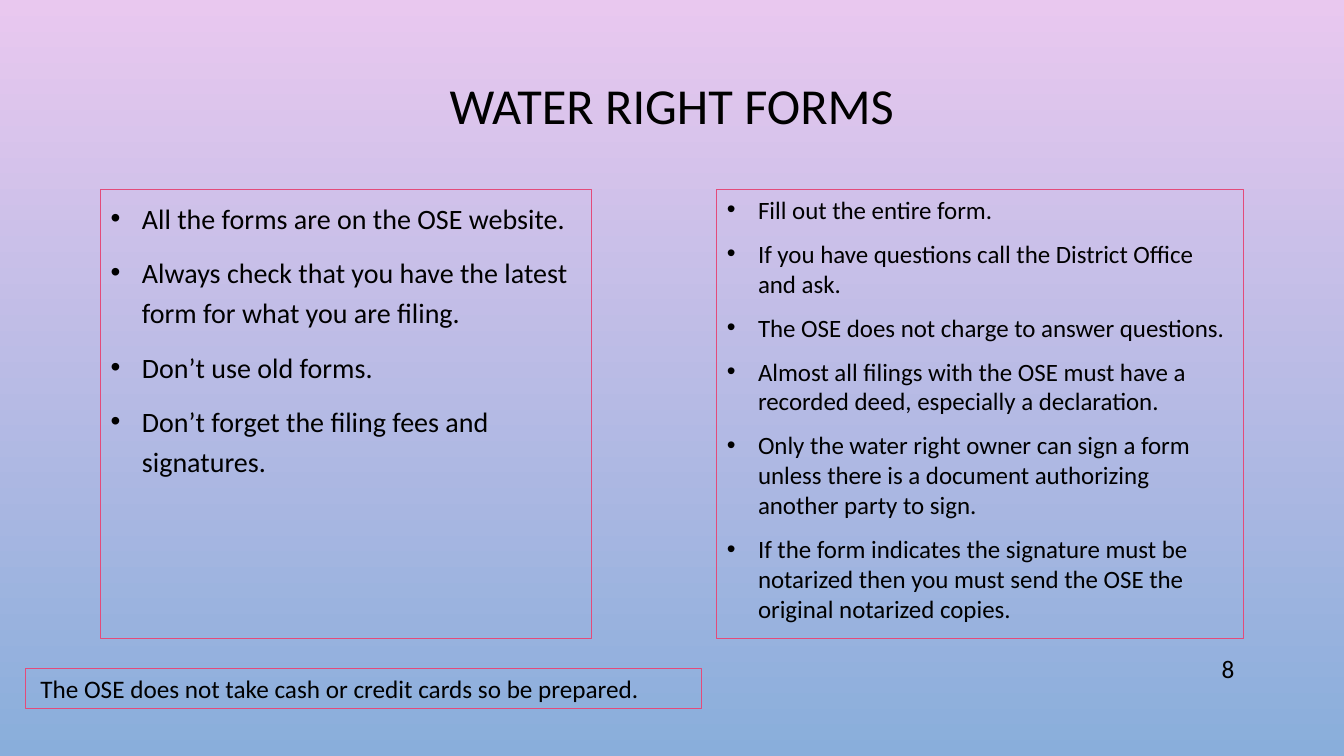
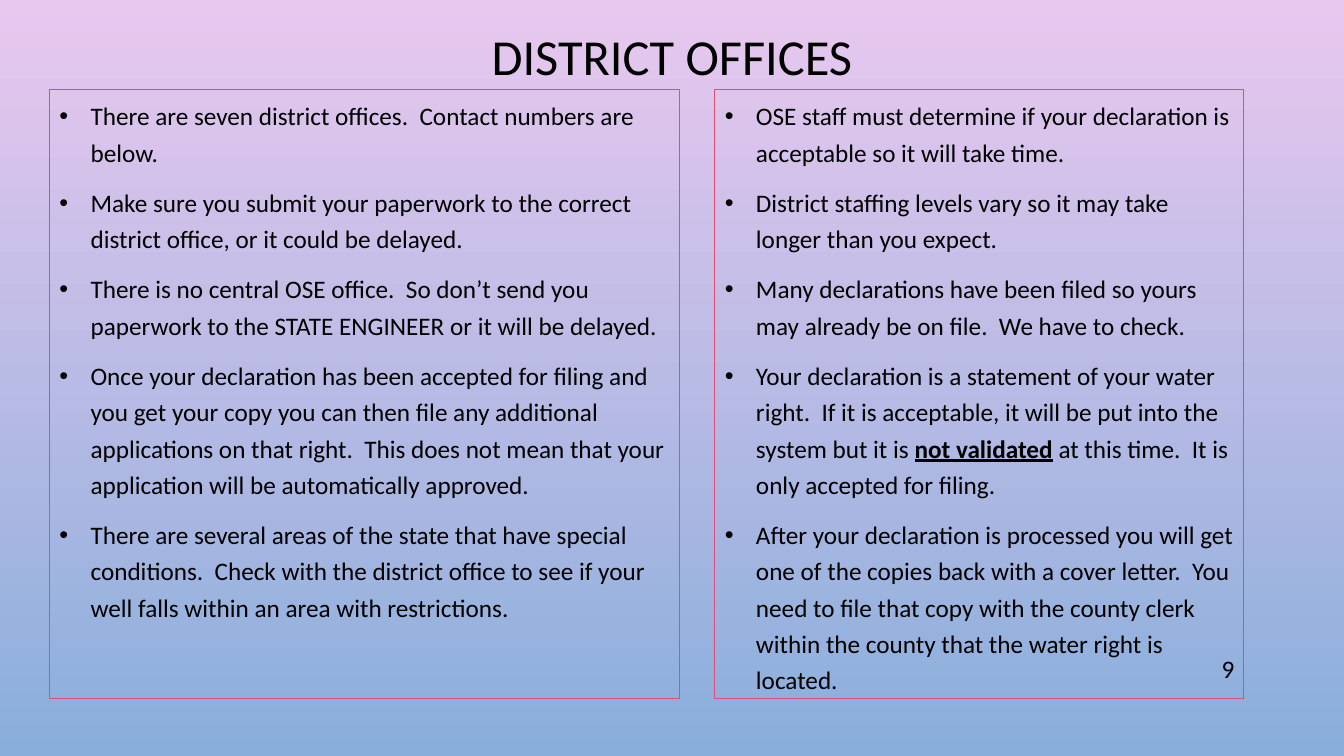
from lxml import etree
from pptx import Presentation
from pptx.dml.color import RGBColor
from pptx.enum import shapes, text
from pptx.oxml.ns import qn
from pptx.util import Inches, Pt

FONT = "Calibri"
BLACK, PINK, SKY_TOP, SKY_BOTTOM = "000000", "E34B7A", "E9C8EF", "89AEDB"
INDENT = 0.31

SLIDES = [
    {
        "title": "WATER RIGHT FORMS",
        "title_at": (1, 0.67, 11.33, 0.81),
        "number": "8",
        "panels": [
            {"at": (1, 1.88, 4.87, 4.46), "size": 20, "spacing": 1.2, "items": [
                "All the forms are on the OSE website.",
                "Always check that you have the latest form for what you are filing.",
                "Don’t use old forms.",
                "Don’t forget the filing fees and signatures.",
            ]},
            {"at": (7.11, 1.88, 5.22, 4.46), "size": 17.8, "spacing": 1.0, "items": [
                "Fill out the entire form.",
                "If you have questions call the District Office and ask.",
                "The OSE does not charge to answer questions.",
                "Almost all filings with the OSE must have a recorded deed, especially a declaration.",
                "Only the water right owner can sign a form unless there is a document "
                "authorizing another party to sign.",
                "If the form indicates the signature must be notarized then you must send "
                "the OSE the original notarized copies.",
            ]},
        ],
        "note": "The OSE does not take cash or credit cards so be prepared.",
    },
    {
        "title": "DISTRICT OFFICES",
        "title_at": (1, 0.29, 11.33, 0.6),
        "number": "9",
        "panels": [
            {"at": (0.49, 0.89, 6.25, 6.04), "size": 18, "spacing": 1.2, "items": [
                "There are seven district offices.  Contact numbers are below.",
                "Make sure you submit your paperwork to the correct district office, "
                "or it could be delayed.",
                "There is no central OSE office.  So don’t send you paperwork to the "
                "STATE ENGINEER or it will be delayed.",
                "Once your declaration has been accepted for filing and you get your copy "
                "you can then file any additional applications on that right.  This does "
                "not mean that your application will be automatically approved.",
                "There are several areas of the state that have special conditions.  Check "
                "with the district office to see if your well falls within an area with "
                "restrictions.",
            ]},
            {"at": (7.09, 0.89, 5.24, 6.04), "size": 18, "spacing": 1.2, "items": [
                "OSE staff must determine if your declaration is acceptable so it will take time.",
                "District staffing levels vary so it may take longer than you expect.",
                "Many declarations have been filed so yours may already be on file.  "
                "We have to check.",
                ("Your declaration is a statement of your water right.  If it is acceptable, "
                 "it will be put into the system but it is ",
                 "not validated",
                 " at this time.  It is only accepted for filing."),
                "After your declaration is processed you will get one of the copies back "
                "with a cover letter.  You need to file that copy with the county clerk "
                "within the county that the water right is located.",
            ]},
        ],
    },
]


def rgb(value):
    return RGBColor.from_string(value)


def add_run(p, words, size, strong=False):
    r = p.add_run()
    r.text = words
    r.font.name, r.font.size = FONT, Pt(size)
    r.font.color.rgb = rgb(BLACK)
    if strong:
        r.font.bold = r.font.underline = True


def add_label(s, at, words, size, align, spacing=1.0):
    tf = s.shapes.add_textbox(*map(Inches, at)).text_frame
    tf.word_wrap = True
    tf.vertical_anchor = text.MSO_ANCHOR.MIDDLE
    p = tf.paragraphs[0]
    p.alignment, p.line_spacing = align, spacing
    add_run(p, words, size)


def add_frame(s, at):
    sp = s.shapes.add_shape(shapes.MSO_SHAPE.RECTANGLE, *map(Inches, at))
    sp.shadow.inherit = False
    sp.fill.background()
    sp.line.color.rgb = rgb(PINK)
    sp.line.width = Pt(0.75)
    tf = sp.text_frame
    tf.word_wrap = True
    tf.vertical_anchor = text.MSO_ANCHOR.TOP
    tf.paragraphs[0].alignment = text.PP_ALIGN.LEFT
    return tf


def add_bullet(p):
    pPr = p._p.get_or_add_pPr()
    pPr.set("marL", str(Inches(INDENT)))
    pPr.set("indent", str(-Inches(INDENT)))
    color = etree.SubElement(pPr, qn("a:buClr"))
    etree.SubElement(color, qn("a:srgbClr"), val=BLACK)
    etree.SubElement(pPr, qn("a:buFont"), typeface="Arial")
    etree.SubElement(pPr, qn("a:buChar"), char="•")


def add_panel(s, panel):
    tf = add_frame(s, panel["at"])
    for i, item in enumerate(panel["items"]):
        p = tf.add_paragraph() if i else tf.paragraphs[0]
        add_bullet(p)
        p.alignment = text.PP_ALIGN.LEFT
        p.line_spacing = panel["spacing"]
        p.space_before = Pt(10 if i else 0)
        parts = (item,) if isinstance(item, str) else item
        for j, part in enumerate(parts):
            add_run(p, part, panel["size"], strong=j == 1)


def add_note(s, words):
    tf = add_frame(s, (0.25, 6.63, 6.71, 0.4))
    tf.margin_left = Inches(0.15)
    add_run(tf.paragraphs[0], words, 18)


def add_background(s):
    fill = s.background.fill
    fill.gradient()
    fill.gradient_angle = 270
    for stop, color in zip(fill.gradient_stops, (SKY_TOP, SKY_BOTTOM)):
        stop.color.rgb = rgb(color)


def main():
    prs = Presentation()
    prs.slide_width, prs.slide_height = Inches(13.33), Inches(7.5)
    for content in SLIDES:
        s = prs.slides.add_slide(prs.slide_layouts[6])
        add_background(s)
        add_label(s, content["title_at"], content["title"], 36, text.PP_ALIGN.CENTER, 0.9)
        for panel in content["panels"]:
            add_panel(s, panel)
        if "note" in content:
            add_note(s, content["note"])
        add_label(s, (11.5, 6.43, 0.84, 0.4), content["number"], 18, text.PP_ALIGN.RIGHT)
    prs.save("out.pptx")


if __name__ == "__main__":
    main()
